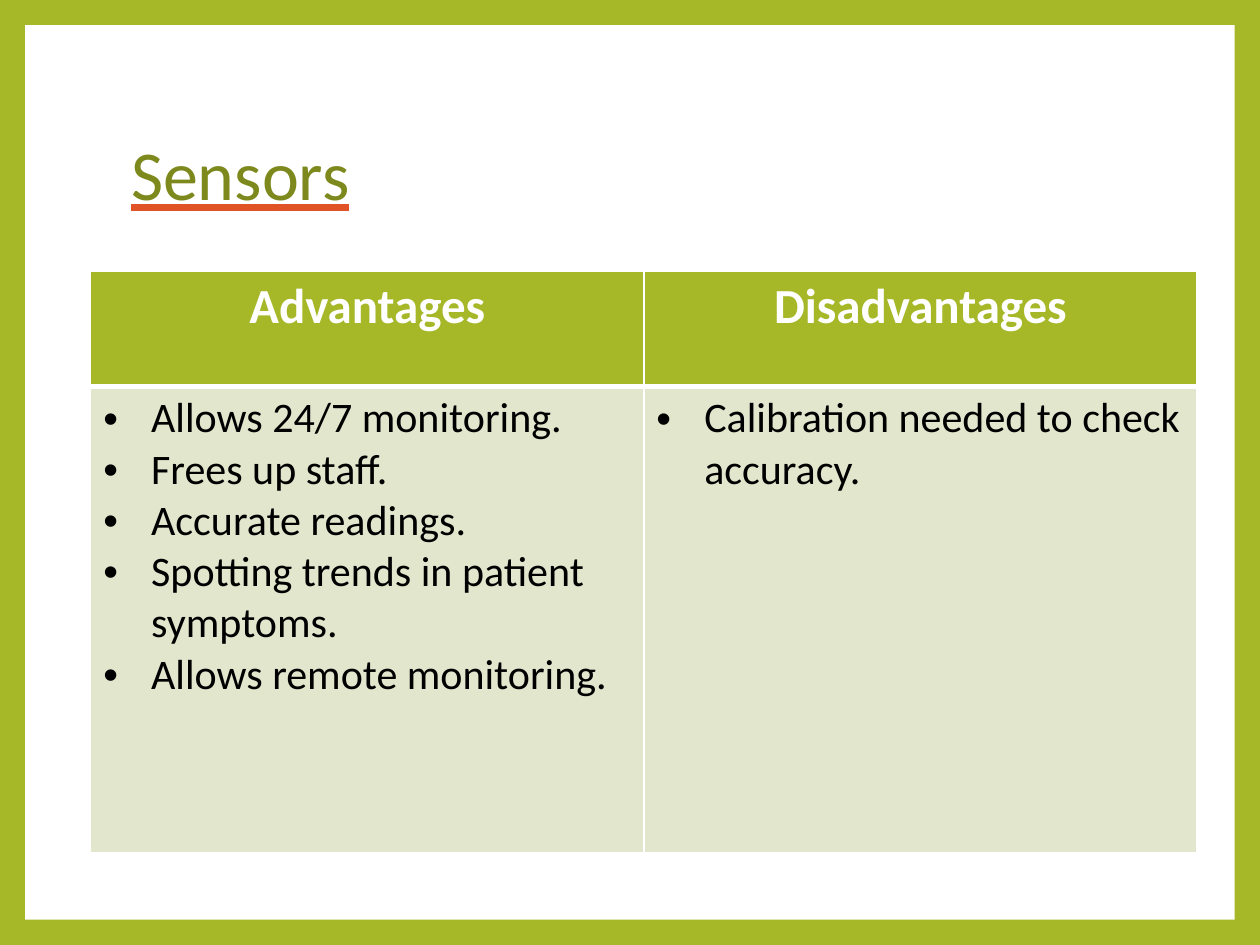
from lxml.etree import SubElement
from pptx import Presentation
from pptx.dml.color import RGBColor
from pptx.enum.shapes import MSO_SHAPE as Shape
from pptx.enum.text import MSO_ANCHOR as Anchor, MSO_AUTO_SIZE as AutoSize, PP_ALIGN as Align
from pptx.oxml import parse_xml
from pptx.oxml.ns import nsdecls, qn
from pptx.util import Inches, Pt

GREEN, OLIVE, PALE, ORANGE = "A6B727", "7D891D", "E1E6CD", "DF5327"
WHITE, BLACK = "FFFFFF", "000000"
FONT = "Calibri"
COLUMNS = {
    "Advantages": [
        "Allows 24/7 monitoring.",
        "Frees up staff.",
        "Accurate readings.",
        "Spotting trends in patient symptoms.",
        "Allows remote monitoring.",
    ],
    "Disadvantages": ["Calibration needed to check accuracy."],
}


def rgb(color):
    """Turn a hex string into a colour."""
    return RGBColor.from_string(color)


def paint(target, color):
    """Give a shape, cell or background a solid fill."""
    target.fill.solid()
    target.fill.fore_color.rgb = rgb(color)


def add_run(paragraph, text, size, color, bold=False):
    """Add one formatted run and return it."""
    run = paragraph.add_run()
    run.text = text
    font = run.font
    font.size, font.bold, font.name = Pt(size), bold, FONT
    font.color.rgb = rgb(color)
    return run


def add_bullet(paragraph, indent):
    """Give a paragraph a hanging round bullet."""
    properties = paragraph._p.get_or_add_pPr()
    properties.set("marL", str(indent))
    properties.set("indent", str(-indent))
    SubElement(properties, qn("a:buFont"), typeface="Arial")
    SubElement(properties, qn("a:buChar"), char="•")


def set_borders(cell, **widths):
    """Draw white cell borders with widths in points by side."""
    properties = cell._tc.get_or_add_tcPr()
    for index, side in enumerate("LRTB"):
        properties.insert(index, parse_xml(
            f'<a:ln{side} {nsdecls("a")} w="{Pt(widths.get(side, 1))}">'
            f'<a:solidFill><a:srgbClr val="{WHITE}"/></a:solidFill></a:ln{side}>'))


def add_frame(slide, left, top, width, height):
    """Set the green surround and the white panel behind the content."""
    paint(slide.background, GREEN)
    panel = slide.shapes.add_shape(Shape.RECTANGLE, left, top, width, height)
    panel.shadow.inherit = False
    paint(panel, WHITE)
    panel.line.fill.background()
    slide.shapes.element.insert(2, panel._element)


def set_title(slide, text, left, top, width, height):
    """Place the title with its coloured underline."""
    title = slide.shapes.title
    title.left, title.top, title.width, title.height = left, top, width, height
    frame = title.text_frame
    frame.vertical_anchor, frame.word_wrap = Anchor.MIDDLE, True
    frame.auto_size = AutoSize.NONE
    paragraph = frame.paragraphs[0]
    paragraph.alignment, paragraph.line_spacing = Align.LEFT, 0.9
    run = add_run(paragraph, text, 40, OLIVE)
    run.font.underline = True
    run.font._element.find(qn("a:latin")).addprevious(parse_xml(
        f'<a:uFill {nsdecls("a")}><a:solidFill><a:srgbClr val="{ORANGE}"/>'
        '</a:solidFill></a:uFill>'))


def add_comparison(slide, columns, left, top, width, height):
    """Add a table with one headed list of points in each column."""
    table = slide.shapes.add_table(2, len(columns), left, top, width, height).table
    table.rows[0].height = Inches(0.92)
    table.rows[1].height = height - table.rows[0].height
    for column, (heading, points) in enumerate(columns.items()):
        head, body = table.cell(0, column), table.cell(1, column)
        paint(head, GREEN)
        set_borders(head, B=3)
        paragraph = head.text_frame.paragraphs[0]
        paragraph.alignment = Align.CENTER
        add_run(paragraph, heading, 28, WHITE, bold=True)
        paint(body, PALE)
        set_borders(body, T=3)
        frame = body.text_frame
        for index, point in enumerate(points):
            paragraph = frame.add_paragraph() if index else frame.paragraphs[0]
            add_bullet(paragraph, Inches(0.38))
            add_run(paragraph, point, 24, BLACK)


def main():
    """Build and save the slide."""
    deck = Presentation()
    deck.slide_width, deck.slide_height = Inches(10), Inches(7.5)
    slide = deck.slides.add_slide(deck.slide_layouts[5])
    add_frame(slide, Inches(0.2), Inches(0.2), Inches(9.6), Inches(7.1))
    set_title(slide, "Sensors", Inches(0.94), Inches(0.67), Inches(8.1), Inches(1.48))
    add_comparison(slide, COLUMNS, Inches(0.72), Inches(2.15), Inches(8.78), Inches(4.62))
    deck.save("out.pptx")


if __name__ == "__main__":
    main()
